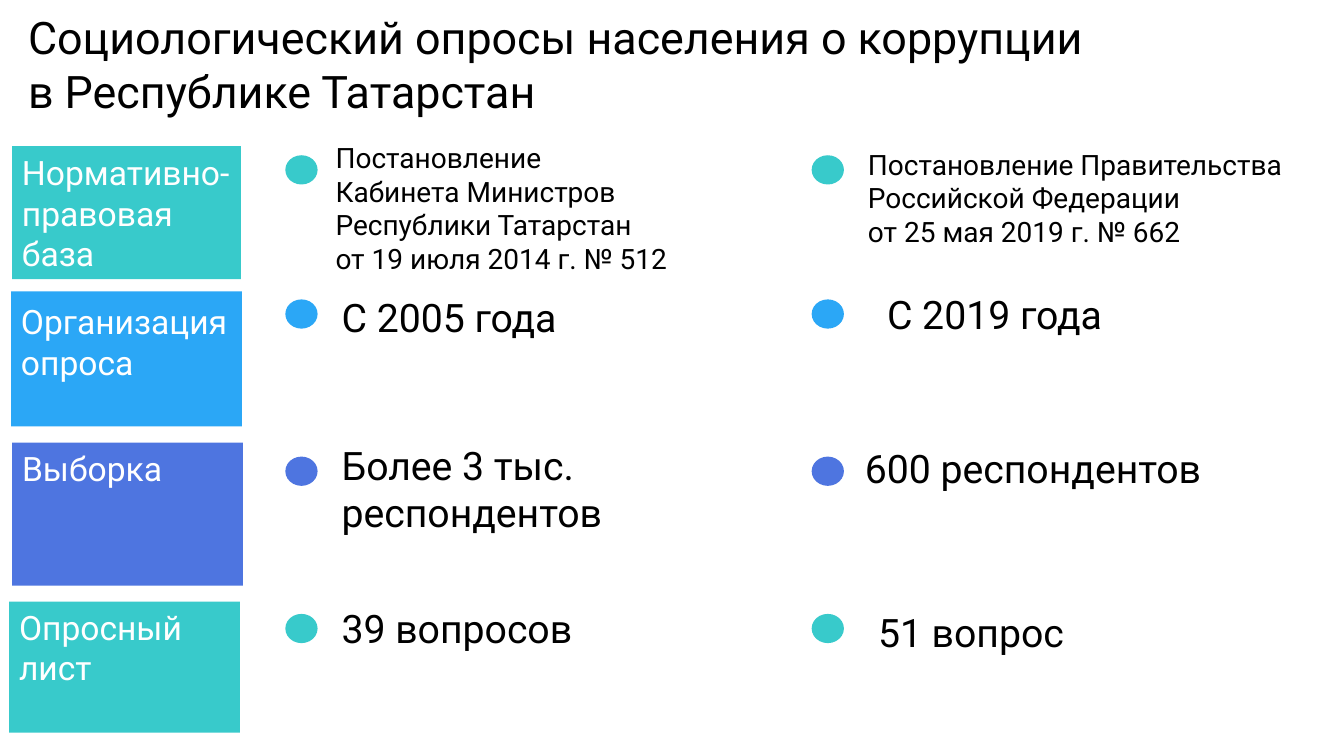
from dataclasses import dataclass

from pptx import Presentation
from pptx.dml.color import RGBColor
from pptx.enum.shapes import MSO_SHAPE
from pptx.enum.text import MSO_ANCHOR, PP_ALIGN
from pptx.shapes.autoshape import Shape
from pptx.slide import Slide
from pptx.util import Inches, Pt

FONT = "Roboto"
BLACK = "000000"
WHITE = "FFFFFF"
TEAL = "38CACB"
BLUE = "2BA7F6"
INDIGO = "4E75E0"
BULLET_COLUMNS = (2.83, 8.05)
BULLET_WIDTH = 0.32
BULLET_HEIGHT = 0.29


@dataclass
class Box:
    left: float
    top: float
    width: float
    height: float


@dataclass
class Caption:
    text: str
    box: Box
    size: int = 28
    anchor: MSO_ANCHOR = MSO_ANCHOR.TOP


@dataclass
class Category:
    text: str
    box: Box
    color: str
    bullet_top: float
    anchor: MSO_ANCHOR = MSO_ANCHOR.TOP
    top_margin: float = 0.05


CATEGORIES = (
    Category("Нормативно-правовая база", Box(0.12, 1.45, 2.27, 1.32), TEAL, 1.54,
             anchor=MSO_ANCHOR.MIDDLE),
    Category("Организация опроса", Box(0.11, 2.89, 2.29, 1.34), BLUE, 2.97,
             top_margin=0.1),
    Category("Выборка", Box(0.12, 4.39, 2.29, 1.42), INDIGO, 4.53),
    Category("Опросный лист", Box(0.09, 5.97, 2.29, 1.3), TEAL, 6.09),
)

CAPTIONS = (
    Caption("Социологический опросы населения о коррупции\nв Республике Татарстан",
            Box(0.18, 0.05, 13, 1.18), size=32),
    Caption("Постановление\nКабинета Министров\nРеспублики Татарстан\n"
            "от 19 июля 2014 г. № 512",
            Box(3.23, 1.2, 4.6, 1.72), size=20, anchor=MSO_ANCHOR.MIDDLE),
    Caption("Постановление Правительства Российской Федерации\n"
            "от 25 мая 2019 г. № 662",
            Box(8.51, 1.19, 4.82, 1.54), size=20, anchor=MSO_ANCHOR.MIDDLE),
    Caption("С 2005 года", Box(3.29, 2.86, 4.67, 0.57)),
    Caption("С 2019 года", Box(8.7, 2.83, 4.06, 0.57)),
    Caption("Более 3 тыс. респондентов", Box(3.29, 4.33, 4.67, 1.51)),
    Caption("600 респондентов", Box(8.48, 4.36, 4.85, 0.57)),
    Caption("39 вопросов", Box(3.29, 5.95, 4.67, 0.57)),
    Caption("51 вопрос", Box(8.61, 5.99, 4.72, 0.57)),
)


def rgb(color: str) -> RGBColor:
    return RGBColor.from_string(color)


def lengths(box: Box) -> tuple:
    return Inches(box.left), Inches(box.top), Inches(box.width), Inches(box.height)


def write_text(shape: Shape, text: str, size: int, color: str,
               anchor: MSO_ANCHOR) -> None:
    text_frame = shape.text_frame
    text_frame.word_wrap = True
    text_frame.vertical_anchor = anchor
    text_frame.text = text
    for paragraph in text_frame.paragraphs:
        paragraph.alignment = PP_ALIGN.LEFT
        for run in paragraph.runs:
            run.font.name = FONT
            run.font.size = Pt(size)
            run.font.color.rgb = rgb(color)


def add_filled_shape(slide: Slide, kind: MSO_SHAPE, box: Box, color: str) -> Shape:
    shape = slide.shapes.add_shape(kind, *lengths(box))
    shape.shadow.inherit = False
    shape.fill.solid()
    shape.fill.fore_color.rgb = rgb(color)
    shape.line.fill.background()
    return shape


def add_category(slide: Slide, category: Category) -> None:
    shape = add_filled_shape(slide, MSO_SHAPE.RECTANGLE, category.box, category.color)
    write_text(shape, category.text, 24, WHITE, category.anchor)
    shape.text_frame.margin_top = Inches(category.top_margin)
    for left in BULLET_COLUMNS:
        bullet = Box(left, category.bullet_top, BULLET_WIDTH, BULLET_HEIGHT)
        add_filled_shape(slide, MSO_SHAPE.FLOWCHART_CONNECTOR, bullet, category.color)


def add_caption(slide: Slide, caption: Caption) -> None:
    shape = slide.shapes.add_textbox(*lengths(caption.box))
    write_text(shape, caption.text, caption.size, BLACK, caption.anchor)


def main() -> None:
    presentation = Presentation()
    presentation.slide_width = Inches(13.33)
    presentation.slide_height = Inches(7.5)
    slide = presentation.slides.add_slide(presentation.slide_layouts[6])
    for category in CATEGORIES:
        add_category(slide, category)
    for caption in CAPTIONS:
        add_caption(slide, caption)
    presentation.save("out.pptx")


if __name__ == "__main__":
    main()
